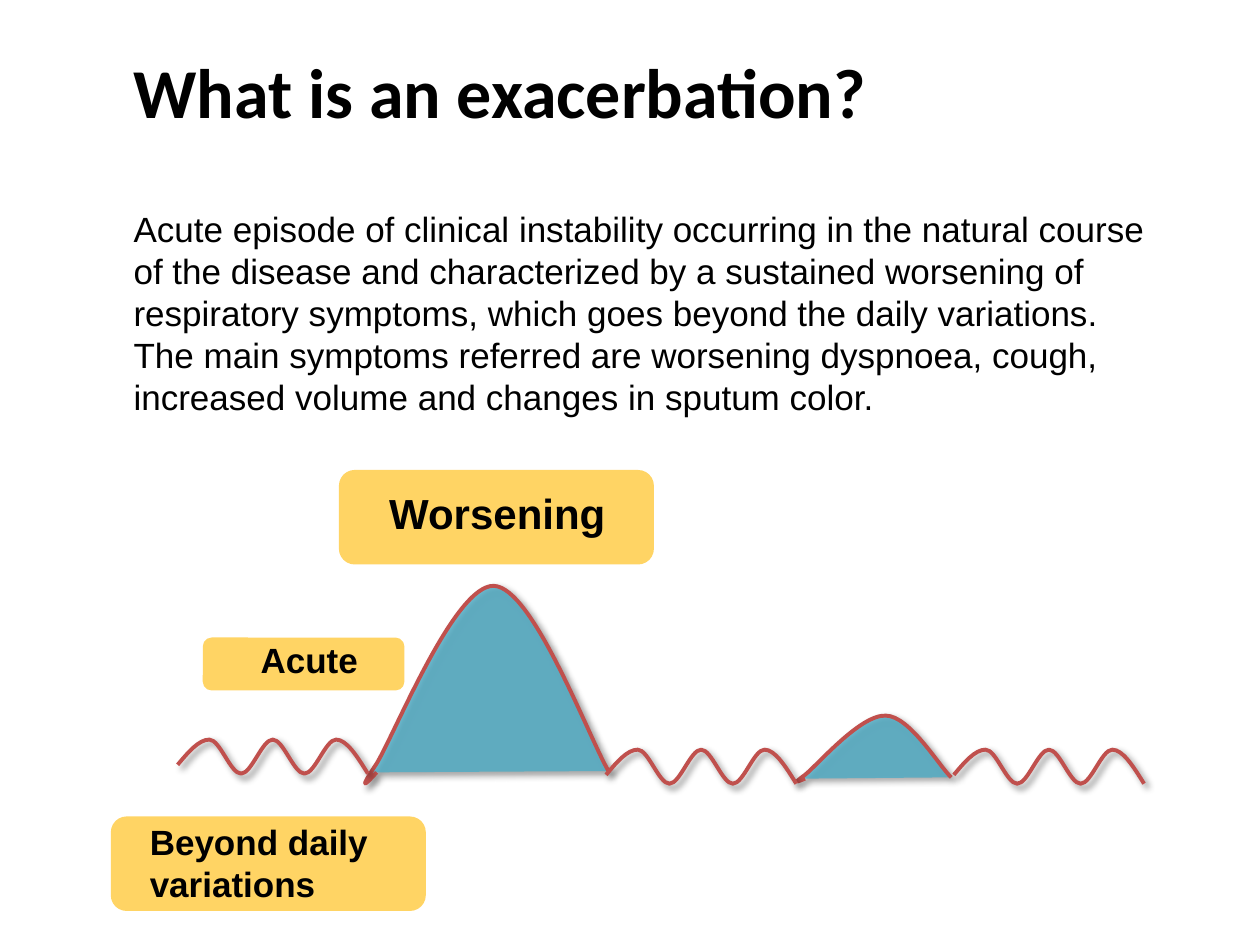
from lxml import etree
from pptx import Presentation
from pptx.dml.color import RGBColor
from pptx.enum.shapes import MSO_SHAPE
from pptx.enum.text import MSO_ANCHOR, MSO_AUTO_SIZE, PP_ALIGN
from pptx.oxml import parse_xml
from pptx.oxml.ns import nsdecls, qn
from pptx.util import Inches, Pt

ROUND = MSO_SHAPE.ROUNDED_RECTANGLE
LEFT, TOP, MIDDLE = PP_ALIGN.LEFT, MSO_ANCHOR.TOP, MSO_ANCHOR.MIDDLE
NONE, GROW = MSO_AUTO_SIZE.NONE, MSO_AUTO_SIZE.SHAPE_TO_FIT_TEXT

THEME = {
    "text": "000000", "line": "C0504D", "peak": "4BACC6", "label": "FFC019",
    "head": "Calibri", "body": "Arial",
    "title": 40, "large": 24, "plain": 20,
}

# Content
TITLE = "What is an exacerbation?"
BODY = (
    "Acute episode of clinical instability occurring in the natural course of "
    "the disease and characterized by a sustained worsening of respiratory "
    "symptoms, which goes beyond the daily variations. The main symptoms "
    "referred are worsening dyspnoea, cough, increased volume and changes in "
    "sputum color."
)
# Label: text, size, box, text area
LABELS = [
    ("Worsening", "large", (2.69, 3.73, 2.5, 0.75), (2.99, 3.82, 2.61, 0.5)),
    ("Beyond daily variations", "plain",
     (0.88, 6.48, 2.5, 0.75), (1.09, 6.46, 2.61, 0.77)),
    ("Acute", "plain", (1.61, 5.06, 1.6, 0.42), (1.97, 5.02, 1.67, 0.44)),
]
# Peaks: start point, then two control points and an end point per curve
PEAKS = [
    [(2.99, 6.13), (2.91, 6.22), (2.83, 6.3), (2.99, 6.06),
     (3.14, 5.81), (3.61, 4.64), (3.92, 4.65),
     (4.23, 4.66), (4.68, 5.87), (4.83, 6.12)],
    [(6.39, 6.18), (6.34, 6.2), (6.28, 6.23), (6.39, 6.15),
     (6.49, 6.07), (6.83, 5.67), (7.03, 5.68),
     (7.22, 5.68), (7.46, 6.09), (7.55, 6.17)],
]
WAVES = [(1.41, 6.07), (4.81, 6.15), (7.57, 6.15)]
SPAN, CREST, DIP, TURNS = 1.51, -0.2, 0.07, 6


def paint(fill, color, alpha):
    fill.solid()
    fill.fore_color.rgb = RGBColor.from_string(THEME[color])
    tint = fill._xPr.find(qn("a:solidFill"))[0]
    etree.SubElement(tint, qn("a:alpha"), val=str(alpha * 1000))


def write(shape, text, size, font, bold, anchor=TOP, gap=0, fit=GROW):
    frame = shape.text_frame
    frame.text = text
    frame.word_wrap = True
    frame.auto_size = fit
    frame.vertical_anchor = anchor
    para = frame.paragraphs[0]
    para.alignment = LEFT
    para.space_before = para.space_after = Pt(gap)
    face = para.runs[0].font
    face.name, face.size, face.bold = THEME[font], Pt(THEME[size]), bold
    face.color.rgb = RGBColor.from_string(THEME["text"])
    return para


def place(shape, box):
    shape.left, shape.top, shape.width, shape.height = map(Inches, box)


def wave(left, base):
    """Points of an even ripple that starts at left, base."""
    step = SPAN / TURNS
    ends = [CREST, DIP] * (TURNS // 2)
    pts = [(left, base)]
    for i, (old, new) in enumerate(zip([0] + ends, ends)):
        x = left + i * step
        first = CREST / 2 if i == 0 else old
        last = (CREST + DIP) / 2 if i == TURNS - 1 else new
        pts += [(x + step / 3, base + first),
                (x + step * 2 / 3, base + last),
                (x + step, base + new)]
    return pts


def curve(shapes, pts, filled):
    start, *rest = [(Inches(x), Inches(y)) for x, y in pts]
    pen = shapes.build_freeform(*start, scale=1.0)
    pen.add_line_segments(rest, close=False)
    shape = pen.convert_to_shape()
    # Join each three straight steps into one Bezier curve
    track = shape._element.spPr.find(".//" + qn("a:path"))
    steps = track.findall(qn("a:lnTo"))
    for i in range(0, len(steps), 3):
        bend = etree.SubElement(track, qn("a:cubicBezTo"))
        for step in steps[i:i + 3]:
            bend.append(step[0])
            track.remove(step)
    if filled:
        paint(shape.fill, "peak", 78)
    else:
        shape.fill.background()
    shape.line.color.rgb = RGBColor.from_string(THEME["line"])
    shape.line.width = Pt(2.25)
    shape._element.spPr.append(parse_xml(
        f'<a:effectLst {nsdecls("a")}><a:outerShdw blurRad="{Pt(4)}" '
        f'dist="{Pt(3)}" dir="2700000" algn="tl" rotWithShape="0">'
        '<a:srgbClr val="000000"><a:alpha val="43000"/></a:srgbClr>'
        '</a:outerShdw></a:effectLst>'))


def main():
    deck = Presentation()
    deck.slide_width, deck.slide_height = Inches(10), Inches(7.5)
    slide = deck.slides.add_slide(deck.slide_layouts[1])
    shapes = slide.shapes

    # Title and definition
    title, body = slide.placeholders
    place(title, (0.96, 0.33, 8.08, 0.78))
    write(title, TITLE, "title", "head", True, MIDDLE, fit=NONE)
    place(body, (0.96, 1.6, 8.39, 1.78))
    props = write(body, BODY, "plain", "body", False, fit=NONE)._p.get_or_add_pPr()
    props.set("marL", "0")
    props.set("indent", "0")
    etree.SubElement(props, qn("a:buNone"))

    # Symptom curve
    for pts in PEAKS:
        curve(shapes, pts, True)
    for spot in WAVES:
        curve(shapes, wave(*spot), False)

    # Labels
    for text, size, box, area in LABELS:
        card = shapes.add_shape(ROUND, *map(Inches, box))
        card.shadow.inherit = False
        card.line.fill.background()
        paint(card.fill, "label", 67)
        note = shapes.add_textbox(*map(Inches, area))
        write(note, text, size, "body", True, gap=5)

    deck.save("out.pptx")


if __name__ == "__main__":
    main()
